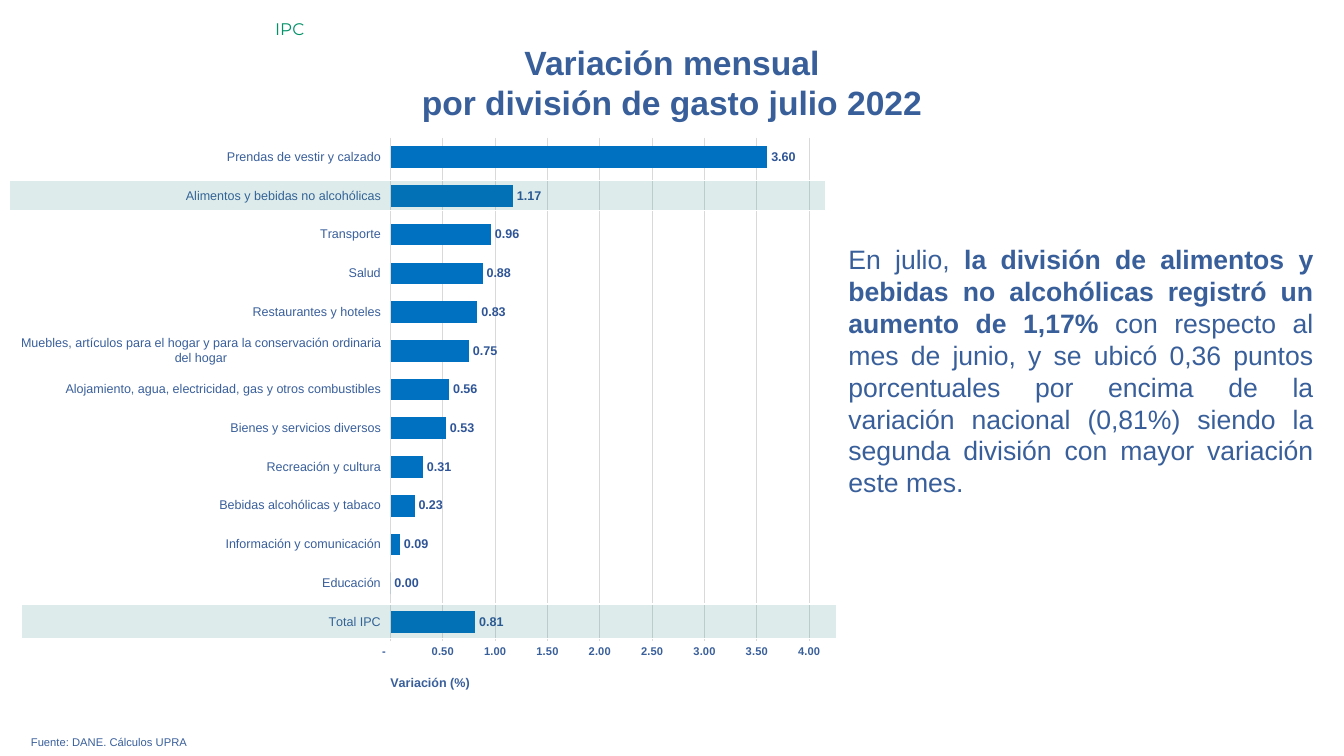
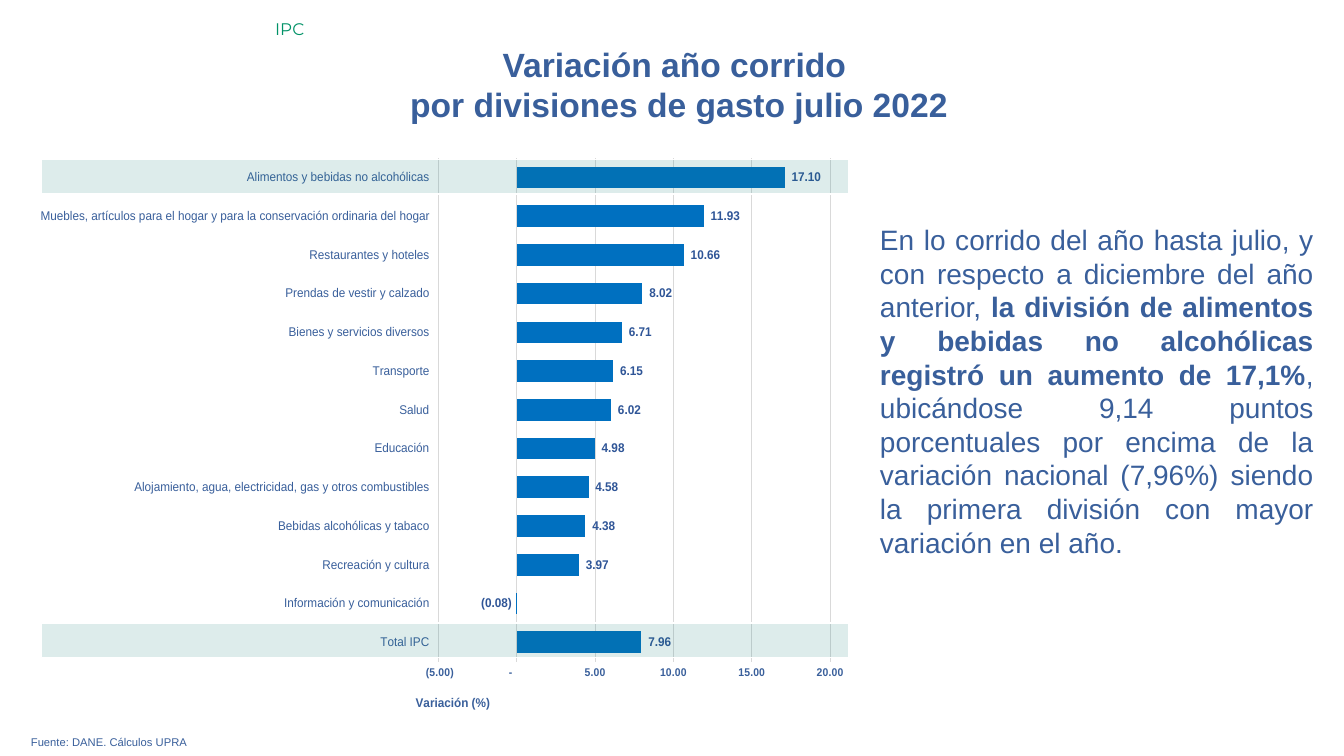
from lxml import etree
from pptx import Presentation
from pptx.chart.data import CategoryChartData
from pptx.dml.color import RGBColor
from pptx.enum import chart as chart_enum, shapes, text
from pptx.oxml import ns
from pptx.util import Pt

BLUE, DARK_BLUE, BAR_BLUE = "395F9B", "2F5597", "0070C0"
GREEN, TEAL, GRAY, WHITE = "009267", "117A76", "D9D9D9", "FFFFFF"
ACCOUNTING = '_(* #,##0.00_);_(* \\(#,##0.00\\);_(* "-"??_);_(@_)'
CHART_SIZE = (578, 414)
ALIGN = text.PP_ALIGN

FOOD = "Alimentos y bebidas no alcohólicas"
CLOTHING = "Prendas de vestir y calzado"
TRANSPORT = "Transporte"
HEALTH = "Salud"
RESTAURANTS = "Restaurantes y hoteles"
FURNITURE = "Muebles, artículos para el hogar y para la conservación ordinaria del hogar"
HOUSING = "Alojamiento, agua, electricidad, gas y otros combustibles"
SERVICES = "Bienes y servicios diversos"
RECREATION = "Recreación y cultura"
DRINKS = "Bebidas alcohólicas y tabaco"
INFORMATION = "Información y comunicación"
EDUCATION = "Educación"
TOTAL = "Total IPC"

# Content of each slide; chart values run from the bottom bar to the top one
PAGES = [
    {
        "title": ["Variación mensual", "por división de gasto julio 2022"],
        "title_at": (99.5, 26.5),
        "values": {
            TOTAL: 0.81, EDUCATION: 0, INFORMATION: 0.09, DRINKS: 0.23,
            RECREATION: 0.31, SERVICES: 0.53, HOUSING: 0.56, FURNITURE: 0.75,
            RESTAURANTS: 0.83, HEALTH: 0.88, TRANSPORT: 0.96, FOOD: 1.17,
            CLOTHING: 3.6,
        },
        "chart_at": (15, 83.5),
        "scale": (0, 4, 0.5),
        "label_format": "#,##0.00",
        "axis_title_x": 0.45,
        "bands": [(15, 431.5, 583, 24.5), (6.5, 129, 583, 21.5)],
        "comment": [
            ("En julio, ", False),
            ("la división de alimentos y bebidas no alcohólicas registró "
             "un aumento de 1,17% ", True),
            ("con respecto al mes de junio, y se ubicó 0,36 puntos porcentuales "
             "por encima de la variación nacional (0,81%) siendo la segunda "
             "división con mayor variación este mes.", False),
        ],
        "comment_box": (599, 170, 346.3, 191.5),
        "comment_size": 19,
    },
    {
        "title": ["Variación año corrido ", "por divisiones de gasto julio 2022"],
        "title_at": (104.5, 27.5),
        "values": {
            TOTAL: 7.96, INFORMATION: -0.08, RECREATION: 3.97, DRINKS: 4.38,
            HOUSING: 4.58, EDUCATION: 4.98, HEALTH: 6.02, TRANSPORT: 6.15,
            SERVICES: 6.71, CLOTHING: 8.02, RESTAURANTS: 10.66,
            FURNITURE: 11.93, FOOD: 17.1,
        },
        "chart_at": (29, 98),
        "scale": (-5, 20, 5),
        "label_format": ACCOUNTING,
        "axis_title_x": 0.42,
        "bands": [(29.5, 445, 577, 24.5), (29.5, 114, 577, 24.5)],
        "comment": [
            ("En lo corrido del año hasta julio, y con respecto a diciembre "
             "del año anterior, ", False),
            ("la división de alimentos y bebidas no alcohólicas registró "
             "un aumento de 17,1%", True),
            (", ubicándose 9,14 puntos porcentuales por encima de la variación "
             "nacional (7,96%) siendo la primera división con mayor variación "
             "en el año.", False),
        ],
        "comment_box": (621.5, 155.5, 324, 250),
        "comment_size": 20,
    },
]


def color(value):
    return RGBColor.from_string(value)


def add_text(slide, box, paragraphs, size, fill=BLUE, font="Arial", align=ALIGN.JUSTIFY):
    """Add a text box; each paragraph is a list of (words, bold) runs."""
    frame = slide.shapes.add_textbox(*map(Pt, box)).text_frame
    frame.word_wrap = True
    frame.auto_size = text.MSO_AUTO_SIZE.SHAPE_TO_FIT_TEXT
    for index, runs in enumerate(paragraphs):
        paragraph = frame.add_paragraph() if index else frame.paragraphs[0]
        paragraph.alignment = align
        for words, bold in runs:
            run = paragraph.add_run()
            run.text = words
            run.font.name, run.font.size, run.font.bold = font, Pt(size), bold
            run.font.color.rgb = color(fill)


presentation = Presentation()
presentation.slide_width, presentation.slide_height = Pt(960), Pt(540)

for page in PAGES:
    slide = presentation.slides.add_slide(presentation.slide_layouts[6])

    # Bar chart
    data = CategoryChartData()
    data.categories = list(page["values"])
    data.add_series("Series 1", list(page["values"].values()))
    chart = slide.shapes.add_chart(
        chart_enum.XL_CHART_TYPE.BAR_CLUSTERED,
        *map(Pt, page["chart_at"] + CHART_SIZE), data).chart
    chart.has_legend = chart.has_title = False
    chart.font.name, chart.font.size = "Arial", Pt(10.5)
    plot = chart.plots[0]
    plot.gap_width = 79
    plot.vary_by_categories = False
    series = plot.series[0]
    series.invert_if_negative = False
    series.format.fill.solid()
    series.format.fill.fore_color.rgb = color(BAR_BLUE)
    labels = series.data_labels
    labels.show_value = True
    labels.position = chart_enum.XL_LABEL_POSITION.OUTSIDE_END
    labels.number_format = page["label_format"]
    labels.number_format_is_linked = False

    # Axes
    category_axis, value_axis = chart.category_axis, chart.value_axis
    for axis in (category_axis, value_axis):
        axis.major_tick_mark = axis.minor_tick_mark = chart_enum.XL_TICK_MARK.NONE
    category_axis.tick_label_position = chart_enum.XL_TICK_LABEL_POSITION.LOW
    value_axis.minimum_scale, value_axis.maximum_scale, value_axis.major_unit = page["scale"]
    value_axis.tick_labels.number_format = ACCOUNTING
    value_axis.tick_labels.number_format_is_linked = False
    value_axis.format.line.fill.background()
    for line in (category_axis.format.line, value_axis.major_gridlines.format.line):
        line.color.rgb = color(GRAY)
        line.width = Pt(0.75)
    axis_title = value_axis.axis_title
    axis_title.text_frame.text = "Variación (%)"
    title_run = axis_title.text_frame.paragraphs[0].runs[0]
    for font, size, fill, bold in (
            (labels.font, 9, DARK_BLUE, True),
            (category_axis.tick_labels.font, 9, BLUE, False),
            (value_axis.tick_labels.font, 8, BLUE, True),
            (title_run.font, 9, BLUE, True)):
        font.name, font.size, font.bold = "Arial", Pt(size), bold
        font.color.rgb = color(fill)

    # Fixed places of the plot area and the axis title inside the chart
    plot_area = chart.element.find(".//" + ns.qn("c:plotArea"))
    for parent, index, settings in (
            (plot_area, 0, {"layoutTarget": "inner", "xMode": "edge", "yMode": "edge",
                            "x": 0.453, "y": 0.036, "w": 0.521, "h": 0.869}),
            (axis_title.element, 1, {"xMode": "edge", "yMode": "edge",
                                     "x": page["axis_title_x"], "y": 0.958})):
        for old_layout in parent.findall(ns.qn("c:layout")):
            parent.remove(old_layout)
        layout = etree.Element(ns.qn("c:layout"))
        manual = etree.SubElement(layout, ns.qn("c:manualLayout"))
        for name, value in settings.items():
            etree.SubElement(manual, ns.qn("c:" + name)).set("val", str(value))
        parent.insert(index, layout)

    # Texts
    add_text(slide, (15, 522, 929.5, 17), [[("Fuente: DANE. Cálculos UPRA", False)]], 8)
    add_text(slide, page["comment_box"], [page["comment"]], page["comment_size"])
    add_text(slide, page["title_at"] + (761, 65.5),
             [[(words, True)] for words in page["title"]], 24, align=ALIGN.CENTER)
    add_text(slide, (189.5, 9.5, 770, 21.5), [[("IPC", False)]], 12,
             fill=GREEN, font="Montserrat", align=ALIGN.LEFT)

    # Translucent bands over the highlighted bars
    for box in page["bands"]:
        band = slide.shapes.add_shape(shapes.MSO_SHAPE.RECTANGLE, *map(Pt, box))
        band.shadow.inherit = False
        band.fill.solid()
        band.fill.fore_color.rgb = color(TEAL)
        band_color = band.element.spPr.find(ns.qn("a:solidFill")).find(ns.qn("a:srgbClr"))
        etree.SubElement(band_color, ns.qn("a:alpha")).set("val", "14000")
        band.line.color.rgb = color(WHITE)
        band.line.width = Pt(1)

presentation.save("out.pptx")
